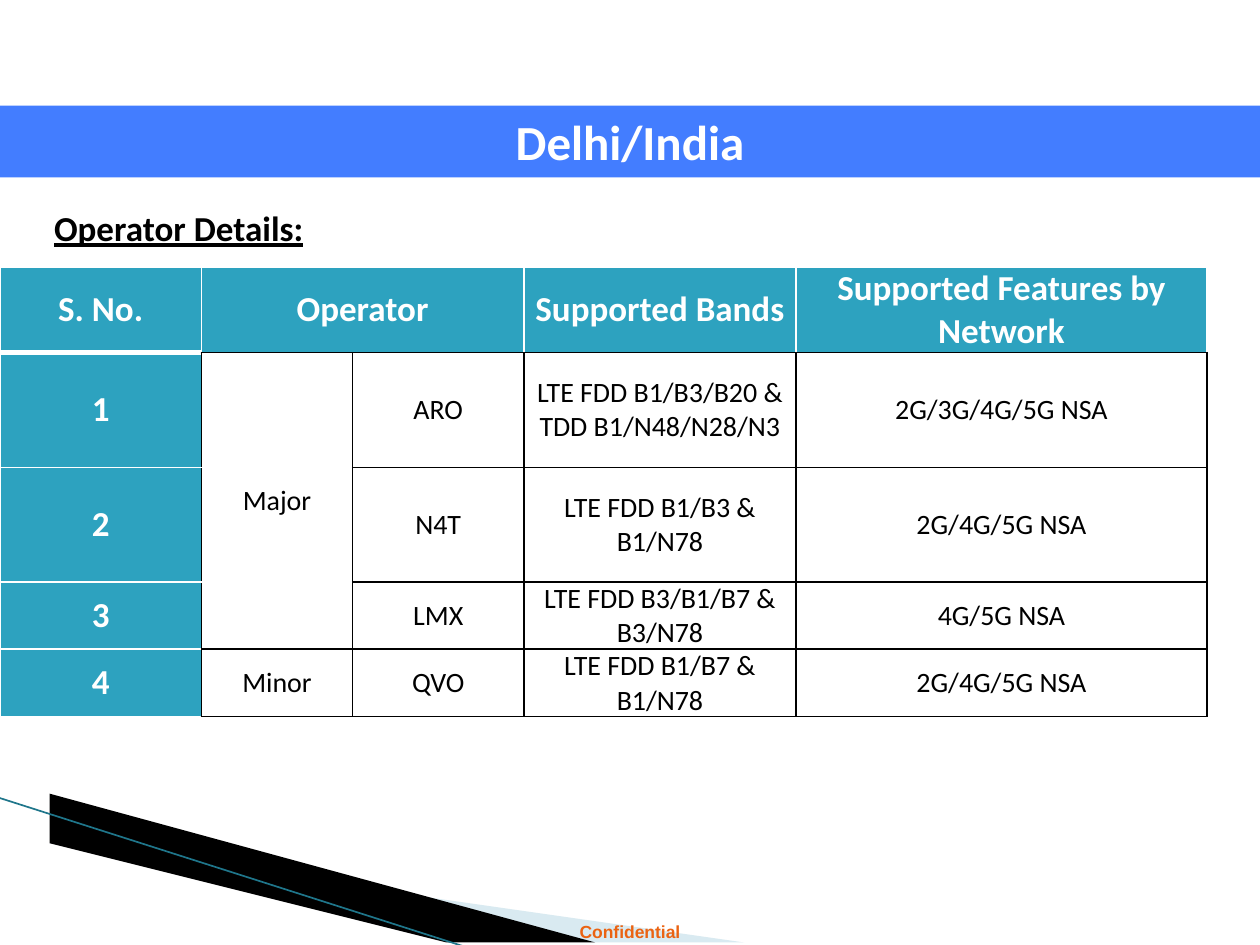
from dataclasses import dataclass

from lxml import etree
from pptx import Presentation
from pptx.dml.color import RGBColor
from pptx.enum.shapes import MSO_CONNECTOR, MSO_SHAPE
from pptx.enum.text import MSO_ANCHOR, PP_ALIGN
from pptx.oxml.ns import qn
from pptx.slide import Slide
from pptx.table import _Cell
from pptx.text.text import TextFrame
from pptx.util import Cm, Pt

RECT = MSO_SHAPE.RECTANGLE
STRAIGHT = MSO_CONNECTOR.STRAIGHT
MIDDLE, TOP = MSO_ANCHOR.MIDDLE, MSO_ANCHOR.TOP
CENTER, LEFT = PP_ALIGN.CENTER, PP_ALIGN.LEFT

WHITE = RGBColor(0xFF, 0xFF, 0xFF)
BLACK = RGBColor(0x00, 0x00, 0x00)
BLUE = RGBColor(0x43, 0x7D, 0xFF)
TEAL = RGBColor(0x2D, 0xA2, 0xBF)
DARK_TEAL = RGBColor(0x1F, 0x76, 0x8B)
PALE_BLUE = RGBColor(0xA0, 0xCB, 0xDC)
ORANGE = RGBColor(0xEB, 0x63, 0x12)

SLIDE_W, SLIDE_H = 25.4, 19.05
COLS = (4.06, 3.05, 3.45, 5.49, 8.28)
ROWS = (1.73, 2.31, 2.31, 1.17, 1.14)
CELLS = (
    ("S. No.", "Operator", "", "Supported Bands", "Supported Features by Network"),
    ("1", "Major", "ARO", "LTE FDD B1/B3/B20 & TDD B1/N48/N28/N3", "2G/3G/4G/5G NSA"),
    ("2", "", "N4T", "LTE FDD B1/B3 & B1/N78", "2G/4G/5G NSA"),
    ("3", "", "LMX", "LTE FDD B3/B1/B7 & B3/N78", "4G/5G NSA"),
    ("4", "Minor", "QVO", "LTE FDD B1/B7 & B1/N78", "2G/4G/5G NSA"),
)


@dataclass(frozen=True)
class TextStyle:
    size: float
    color: RGBColor
    bold: bool = True
    font: str = "Calibri"
    align: PP_ALIGN = CENTER
    underline: bool = False


@dataclass(frozen=True)
class Wedge:
    points: tuple[tuple[float, float], ...]
    color: RGBColor
    alpha: int = 100


@dataclass(frozen=True)
class Border:
    color: RGBColor
    width: float = 1


HEADING = TextStyle(20, WHITE)
BODY = TextStyle(16, BLACK, bold=False)
WEDGES = (
    Wedge(((1.4, 16.54), (15.11, 19.08), (11.58, 19.08), (1.4, 16.51)), PALE_BLUE, 40),
    Wedge(((1.35, 16.48), (11.61, 19.08), (9.45, 19.1), (1.37, 16.51)), BLACK),
)


def write(tf: TextFrame, text: str, style: TextStyle, anchor: MSO_ANCHOR) -> None:
    tf.word_wrap = True
    tf.vertical_anchor = anchor
    p = tf.paragraphs[0]
    p.alignment = style.align
    r = p.add_run()
    r.text = text
    r.font.name = style.font
    r.font.size = Pt(style.size)
    r.font.bold = style.bold
    r.font.underline = style.underline
    r.font.color.rgb = style.color


def add_text(s: Slide, box: tuple[float, ...], text: str, style: TextStyle) -> None:
    sp = s.shapes.add_textbox(*map(Cm, box))
    write(sp.text_frame, text, style, TOP)


def add_wedge(s: Slide, wedge: Wedge) -> None:
    builder = s.shapes.build_freeform(*wedge.points[0], scale=Cm(1))
    builder.add_line_segments(wedge.points[1:], close=True)
    sp = builder.convert_to_shape()
    sp.shadow.inherit = False
    sp.line.fill.background()
    sp.fill.solid()
    sp.fill.fore_color.rgb = wedge.color
    if wedge.alpha < 100:
        color = sp._element.spPr.find(".//" + qn("a:srgbClr"))
        etree.SubElement(color, qn("a:alpha"), val=str(wedge.alpha * 1000))


def add_edge(s: Slide) -> None:
    line = s.shapes.add_connector(STRAIGHT, Cm(-0.03), Cm(16.08), Cm(9.42), Cm(19.1))
    line.line.color.rgb = DARK_TEAL
    line.line.width = Pt(0.95)
    etree.SubElement(line._element.spPr, qn("a:effectLst"))


def add_banner(s: Slide) -> None:
    sp = s.shapes.add_shape(RECT, Cm(0), Cm(2.13), Cm(SLIDE_W), Cm(1.45))
    sp.shadow.inherit = False
    sp.fill.solid()
    sp.fill.fore_color.rgb = BLUE
    sp.line.fill.background()
    write(sp.text_frame, "Delhi/India", TextStyle(28, WHITE), TOP)


def cell_borders(row: int, col: int) -> dict[str, Border]:
    white, black = Border(WHITE), Border(BLACK)
    if row == 0:
        bottom = Border(WHITE, 3) if col == 0 else black
        return {"L": white, "R": white, "T": white, "B": bottom}
    if col == 0:
        return {"L": white, "R": black, "T": white, "B": white}
    return dict.fromkeys("LRTB", black)


def set_borders(cell: _Cell, borders: dict[str, Border]) -> None:
    tc_pr = cell._tc.get_or_add_tcPr()
    for side, border in borders.items():
        ln = etree.SubElement(tc_pr, qn(f"a:ln{side}"), w=str(Pt(border.width)))
        fill = etree.SubElement(ln, qn("a:solidFill"))
        etree.SubElement(fill, qn("a:srgbClr"), val=str(border.color))


def add_operator_table(s: Slide) -> None:
    frame = s.shapes.add_table(
        len(ROWS), len(COLS), Cm(0), Cm(5.38), Cm(sum(COLS)), Cm(sum(ROWS))
    )
    table = frame.table
    table.horz_banding = False
    for column, width in zip(table.columns, COLS):
        column.width = Cm(width)
    for row, height in zip(table.rows, ROWS):
        row.height = Cm(height)
    table.cell(0, 1).merge(table.cell(0, 2))
    table.cell(1, 1).merge(table.cell(3, 1))
    for i, texts in enumerate(CELLS):
        for j, text in enumerate(texts):
            cell = table.cell(i, j)
            is_heading = i == 0 or j == 0
            set_borders(cell, cell_borders(i, j))
            cell.fill.solid()
            cell.fill.fore_color.rgb = TEAL if is_heading else WHITE
            cell.margin_left = cell.margin_right = Cm(0.18)
            cell.margin_top = cell.margin_bottom = Cm(0)
            cell.vertical_anchor = MIDDLE
            if text:
                write(cell.text_frame, text, HEADING if is_heading else BODY, MIDDLE)


def main() -> None:
    """Build the operator details slide."""
    prs = Presentation()
    prs.slide_width, prs.slide_height = Cm(SLIDE_W), Cm(SLIDE_H)
    s = prs.slides.add_slide(prs.slide_layouts[6])
    for wedge in WEDGES:
        add_wedge(s, wedge)
    add_edge(s)
    footer = TextStyle(10, ORANGE, font="Arial")
    add_text(s, (0, 18.44, SLIDE_W, 0.69), "Confidential", footer)
    add_banner(s)
    add_operator_table(s)
    subtitle = TextStyle(20, BLACK, align=LEFT, underline=True)
    add_text(s, (0.84, 4.04, 23.5, 2.82), "Operator Details:", subtitle)
    prs.save("out.pptx")


if __name__ == "__main__":
    main()
